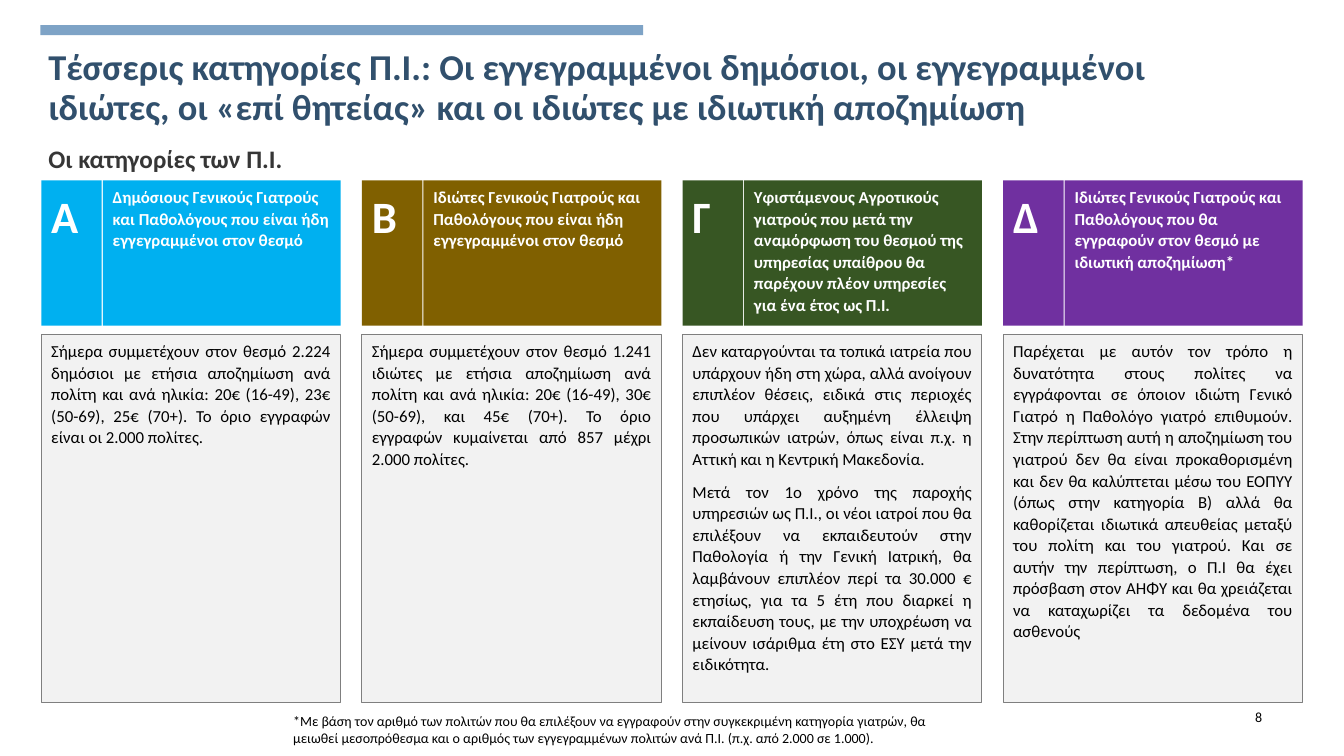
from pptx import Presentation
from pptx.dml.color import RGBColor
from pptx.enum.shapes import MSO_SHAPE
from pptx.enum.text import MSO_ANCHOR, MSO_AUTO_SIZE, PP_ALIGN
from pptx.util import Inches, Pt

RECT = MSO_SHAPE.RECTANGLE
TOP, MIDDLE = MSO_ANCHOR.TOP, MSO_ANCHOR.MIDDLE
LEFT, JUSTIFY = PP_ALIGN.LEFT, PP_ALIGN.JUSTIFY
NO_FIT = MSO_AUTO_SIZE.NONE

FONT = "Calibri"
ACCENT = RGBColor(0x7E, 0xA3, 0xC6)
NAVY = RGBColor(0x31, 0x50, 0x6D)
DARK = RGBColor(0x36, 0x36, 0x36)
BLACK = RGBColor(0x00, 0x00, 0x00)
WHITE = RGBColor(0xFF, 0xFF, 0xFF)
PANEL = RGBColor(0xF2, 0xF2, 0xF2)
BORDER = RGBColor(0x7F, 0x7F, 0x7F)
CYAN = RGBColor(0x00, 0xB0, 0xF0)
OCHRE = RGBColor(0x80, 0x60, 0x00)
GREEN = RGBColor(0x37, 0x56, 0x23)
PURPLE = RGBColor(0x70, 0x30, 0xA0)

TITLE = (
    "Τέσσερις κατηγορίες Π.Ι.: Οι εγγεγραμμένοι δημόσιοι, οι εγγεγραμμένοι ιδιώτες, "
    "οι «επί θητείας» και οι ιδιώτες με ιδιωτική αποζημίωση"
)
FOOTNOTE = (
    "*Με βάση τον αριθμό των πολιτών που θα επιλέξουν να εγγραφούν στην συγκεκριμένη "
    "κατηγορία γιατρών, θα μειωθεί μεσοπρόθεσμα και ο αριθμός των εγγεγραμμένων πολιτών "
    "ανά Π.Ι. (π.χ. από 2.000 σε 1.000)."
)
CATEGORIES = [
    (
        "Α",
        CYAN,
        "Δημόσιους Γενικούς Γιατρούς και Παθολόγους που είναι ήδη εγγεγραμμένοι στον θεσμό",
        [
            "Σήμερα συμμετέχουν στον θεσμό 2.224 δημόσιοι με ετήσια αποζημίωση ανά πολίτη "
            "και ανά ηλικία: 20€ (16-49), 23€ (50-69), 25€ (70+). Το όριο εγγραφών είναι "
            "οι 2.000 πολίτες."
        ],
    ),
    (
        "Β",
        OCHRE,
        "Ιδιώτες Γενικούς Γιατρούς και Παθολόγους που είναι ήδη εγγεγραμμένοι στον θεσμό",
        [
            "Σήμερα συμμετέχουν στον θεσμό 1.241 ιδιώτες με ετήσια αποζημίωση ανά πολίτη "
            "και ανά ηλικία: 20€ (16-49), 30€ (50-69), και 45€ (70+). Το όριο εγγραφών "
            "κυμαίνεται από 857 μέχρι 2.000 πολίτες."
        ],
    ),
    (
        "Γ",
        GREEN,
        "Υφιστάμενους Αγροτικούς γιατρούς που μετά την αναμόρφωση του θεσμού της υπηρεσίας "
        "υπαίθρου θα παρέχουν πλέον υπηρεσίες για ένα έτος ως Π.Ι.",
        [
            "Δεν καταργούνται τα τοπικά ιατρεία που υπάρχουν ήδη στη χώρα, αλλά ανοίγουν "
            "επιπλέον θέσεις, ειδικά στις περιοχές που υπάρχει αυξημένη έλλειψη προσωπικών "
            "ιατρών, όπως είναι π.χ. η Αττική και η Κεντρική Μακεδονία.",
            "Μετά τον 1ο χρόνο της παροχής υπηρεσιών ως Π.Ι., οι νέοι ιατροί που θα επιλέξουν "
            "να εκπαιδευτούν στην Παθολογία ή την Γενική Ιατρική, θα λαμβάνουν επιπλέον περί "
            "τα 30.000 € ετησίως, για τα 5 έτη που διαρκεί η εκπαίδευση τους, με την "
            "υποχρέωση να μείνουν ισάριθμα έτη στο ΕΣΥ μετά την ειδικότητα.",
        ],
    ),
    (
        "Δ",
        PURPLE,
        "Ιδιώτες Γενικούς Γιατρούς και Παθολόγους που θα εγγραφούν στον θεσμό με ιδιωτική "
        "αποζημίωση*",
        [
            "Παρέχεται με αυτόν τον τρόπο η δυνατότητα στους πολίτες να εγγράφονται σε όποιον "
            "ιδιώτη Γενικό Γιατρό η Παθολόγο γιατρό επιθυμούν. Στην περίπτωση αυτή η "
            "αποζημίωση του γιατρού δεν θα είναι προκαθορισμένη και δεν θα καλύπτεται μέσω "
            "του ΕΟΠΥΥ (όπως στην κατηγορία Β) αλλά θα καθορίζεται ιδιωτικά απευθείας μεταξύ "
            "του πολίτη και του γιατρού. Και σε αυτήν την περίπτωση, ο Π.Ι θα έχει πρόσβαση "
            "στον ΑΗΦΥ και θα χρειάζεται να καταχωρίζει τα δεδομένα του ασθενούς"
        ],
    ),
]


def set_text(sp, paragraphs, size, color, bold=False, align=LEFT, spacing=1.0,
             anchor=TOP, inset=0.1):
    """Fill a shape with evenly formatted paragraphs."""
    tf = sp.text_frame
    tf.word_wrap = True
    tf.auto_size = NO_FIT
    tf.vertical_anchor = anchor
    tf.margin_left, tf.margin_right = Inches(inset), Inches(0.1)
    tf.margin_top = tf.margin_bottom = Inches(0.05)
    for i, text in enumerate(paragraphs):
        p = tf.add_paragraph() if i else tf.paragraphs[0]
        p.text = text
        p.alignment = align
        p.line_spacing = spacing
        p.space_before = Pt(8 if i else 0)
        font = p.runs[0].font
        font.name, font.size, font.bold = FONT, Pt(size), bold
        font.color.rgb = color


def add_box(s, x, y, w, h, fill, border=None):
    """Add a flat rectangle with an optional thin border."""
    sp = s.shapes.add_shape(RECT, Inches(x), Inches(y), Inches(w), Inches(h))
    sp.shadow.inherit = False
    sp.fill.solid()
    sp.fill.fore_color.rgb = fill
    if border is None:
        sp.line.fill.background()
    else:
        sp.line.color.rgb = border
        sp.line.width = Pt(0.75)
    return sp


def add_label(s, x, y, w, h, text, size, color, **style):
    """Add a text box with one paragraph."""
    sp = s.shapes.add_textbox(Inches(x), Inches(y), Inches(w), Inches(h))
    set_text(sp, [text], size, color, **style)


def add_heading(s, x, y, w):
    """Place the accent bar, the title and the subtitle."""
    add_box(s, x + 0.04, y, 5.98, 0.1, ACCENT)
    title = s.shapes.title
    title.left, title.top = Inches(x), Inches(y + 0.19)
    title.width, title.height = Inches(w), Inches(0.91)
    set_text(title, [TITLE], 26, NAVY, bold=True, spacing=0.9, inset=0.12)
    add_label(s, x, y + 1.12, w, 0.4, "Οι κατηγορίες των Π.Ι.", 18, DARK,
              bold=True, anchor=MIDDLE, inset=0.12)


def add_category(s, x, y, w, h, letter, color, heading, details):
    """Place one category: letter, coloured heading and details panel."""
    letter_w, head_h, gap = 0.6, 1.44, 0.09
    panel_y = head_h + gap
    panel = add_box(s, x, y + panel_y, w, h - panel_y, PANEL, BORDER)
    set_text(panel, details, 12, BLACK, align=JUSTIFY, spacing=1.07)
    head = add_box(s, x + letter_w + 0.01, y, w - letter_w - 0.01, head_h, color)
    set_text(head, [heading], 12, WHITE, bold=True, spacing=1.07)
    badge = add_box(s, x, y, letter_w, head_h, color)
    set_text(badge, [letter], 32, WHITE, bold=True, spacing=1.07)


def add_footer(s, x, y):
    """Place the footnote and the slide number."""
    add_label(s, x, y, 6.66, 0.43, FOOTNOTE, 10, BLACK)
    add_label(s, x + 9.54, y - 0.05, 0.57, 0.28, "8", 10, BLACK, anchor=MIDDLE)


def main():
    """Build the slide and save it."""
    prs = Presentation()
    prs.slide_width, prs.slide_height = Inches(13.33), Inches(7.5)
    s = prs.slides.add_slide(prs.slide_layouts[5])
    add_heading(s, 0.36, 0.25, 12.4)
    for i, category in enumerate(CATEGORIES):
        add_category(s, 0.41 + i * 3.18, 1.79, 2.97, 5.18, *category)
    add_footer(s, 2.81, 7.02)
    prs.save("out.pptx")


if __name__ == "__main__":
    main()
